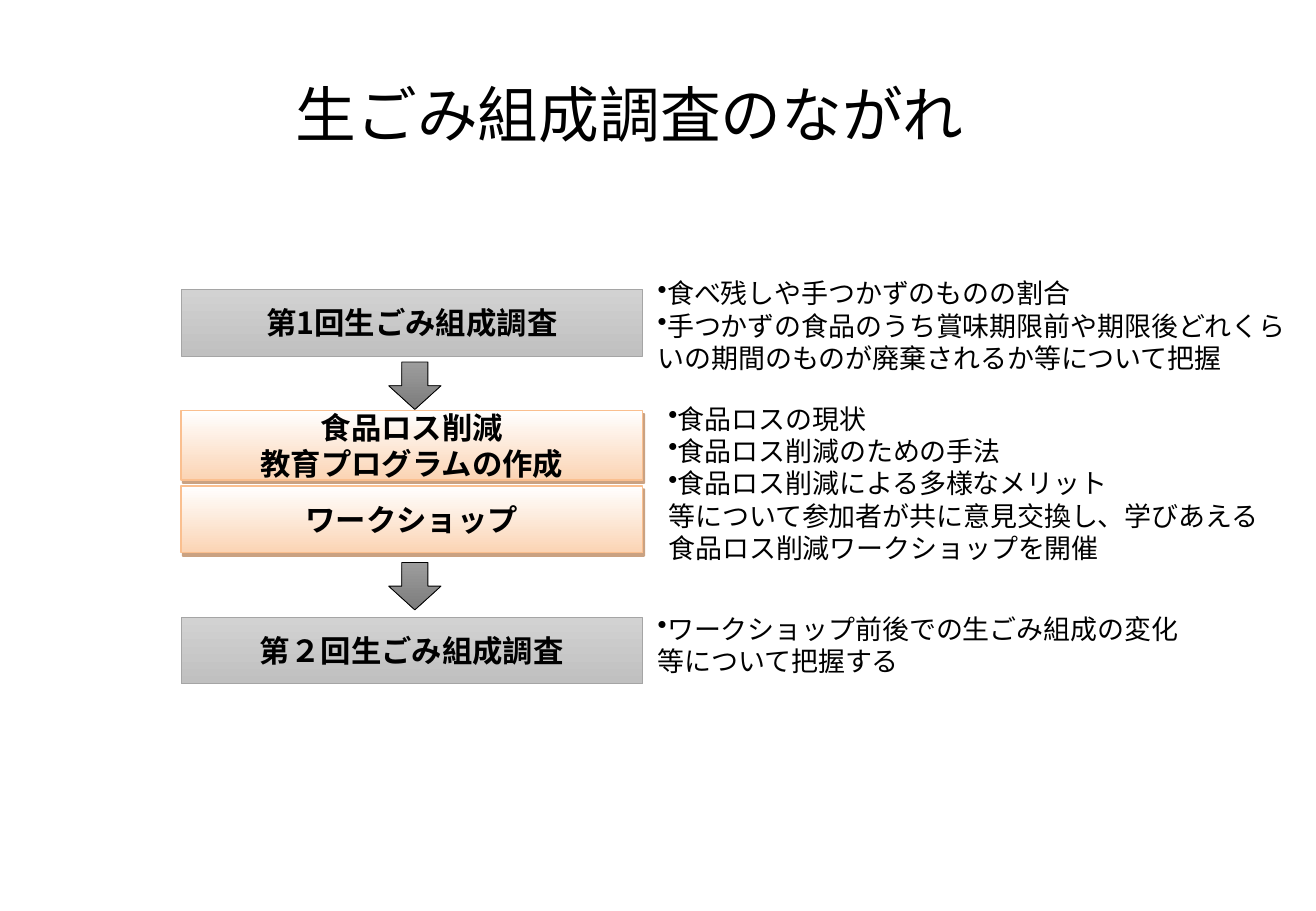
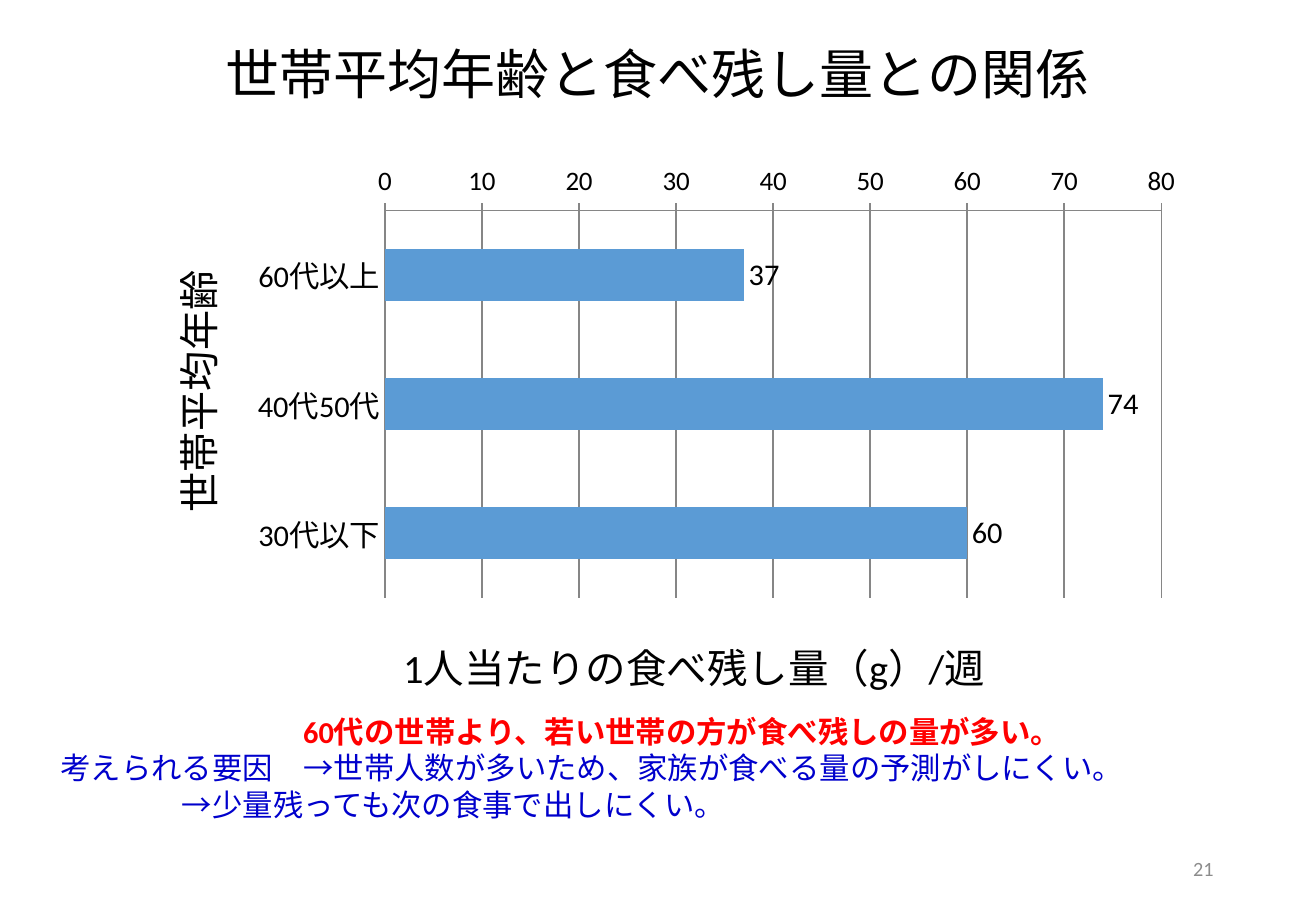
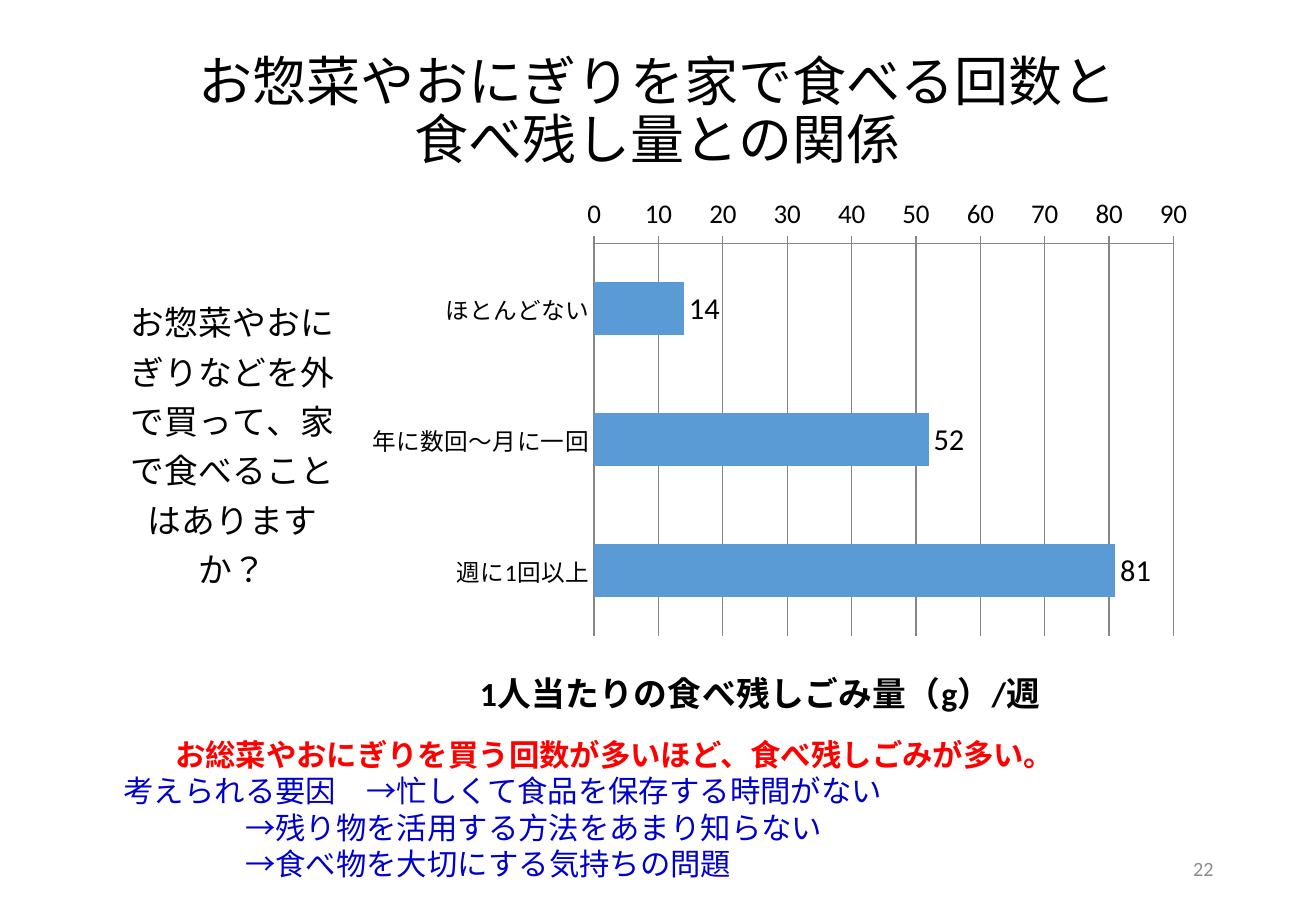
from lxml import etree
from pptx import Presentation
from pptx.chart.data import CategoryChartData
from pptx.dml.color import RGBColor
from pptx.enum import chart as charts, shapes, text
from pptx.oxml.ns import qn
from pptx.util import Pt

# Shared style
BLACK = RGBColor(0x00, 0x00, 0x00)
RED = RGBColor(0xFF, 0x00, 0x00)
BLUE = RGBColor(0x00, 0x00, 0xCC)
BAR_BLUE = RGBColor(0x5B, 0x9B, 0xD5)
AXIS_GRAY = RGBColor(0x86, 0x86, 0x86)
NUMBER_GRAY = RGBColor(0x8C, 0x8C, 0x8C)
GRAY_STYLE = dict(top=RGBColor(0xD2, 0xD2, 0xD2), bottom=RGBColor(0xC0, 0xC0, 0xC0),
                  line=RGBColor(0xA5, 0xA5, 0xA5), weight=0.5)
ORANGE_STYLE = dict(top=RGBColor(0xFF, 0xFF, 0xFF), bottom=RGBColor(0xFB, 0xD4, 0xB4),
                    line=RGBColor(0xFA, 0xBF, 0x8F), weight=1, shadow="974706")
ARROW_STYLE = dict(top=RGBColor(0x9D, 0x9D, 0x9D), bottom=RGBColor(0x7C, 0x7C, 0x7C),
                   line=BLACK, weight=0.5)
LATIN, JAPANESE = "Calibri", "Noto Sans CJK JP"
LINE_HEIGHT = 1.2
NARROW_INSETS = (6, 0.75)
LEFT, CENTER, RIGHT = text.PP_ALIGN.LEFT, text.PP_ALIGN.CENTER, text.PP_ALIGN.RIGHT
TOP, MIDDLE = text.MSO_ANCHOR.TOP, text.MSO_ANCHOR.MIDDLE

# Slide 1: steps as (top, height, style, lines)
FLOW_TITLE = "生ごみ組成調査のながれ"
STEP_LEFT, STEP_WIDTH = 107.3, 273.6
STEPS = [
    (171.4, 39.6, GRAY_STYLE, ["第1回生ごみ組成調査"]),
    (243.4, 41, ORANGE_STYLE, ["食品ロス削減", "教育プログラムの作成"]),
    (288, 39.6, ORANGE_STYLE, ["ワークショップ"]),
    (365.8, 39.6, GRAY_STYLE, ["第２回生ごみ組成調査"]),
]
ARROW_TOPS = [214.6, 333.4]
# Notes as (left, top, width, height, bulleted lines, plain lines)
NOTES = [
    (383.8, 163.4, 396, 72,
     ["食べ残しや手つかずのものの割合",
      "手つかずの食品のうち賞味期限前や期限後どれくらいの期間のものが廃棄されるか等について把握"], []),
    (390.2, 237.6, 389, 100,
     ["食品ロスの現状", "食品ロス削減のための手法", "食品ロス削減による多様なメリット"],
     ["等について参加者が共に意見交換し、学びあえる", "食品ロス削減ワークショップを開催"]),
    (383.8, 362.2, 383.8, 54.7,
     ["ワークショップ前後での生ごみ組成の変化"], ["等について把握する"]),
]

# Slides 2 and 3: layouts are fractions of the chart area
CHART_SLIDES = [
    dict(title=["世帯平均年齢と食べ残し量との関係"], title_top=0, number="21",
         chart_box=(66.2, 92.2, 648, 326.9),
         categories=["60代以上", "40代50代", "30代以下"], values=[37, 74, 60],
         maximum=80, plot=(0.25, 0.1, 0.71, 0.71), category_size=18,
         category_title="世帯平均年齢", category_place=(0.04, 0.2), rotation=-90,
         value_title="1人当たりの食べ残し量（g）/週", value_place=(0.26, 0.86),
         title_size=24, value_bold=False,
         text_box=(28.8, 419, 751, 72.7),
         finding="60代の世帯より、若い世帯の方が食べ残しの量が多い。",
         causes=["世帯人数が多いため、家族が食べる量の予測がしにくい。",
                 "少量残っても次の食事で出しにくい。"]),
    dict(title=["お惣菜やおにぎりを家で食べる回数と", "食べ残し量との関係"],
         title_top=21.6, number="22",
         chart_box=(67, 112.3, 648, 319),
         categories=["ほとんどない", "年に数回～月に一回", "週に1回以上"], values=[14, 52, 81],
         maximum=90, plot=(0.44, 0.1, 0.53, 0.73), category_size=14,
         category_title="お惣菜やおにぎりなどを外で買って、家で食べることはありますか？",
         category_place=(0.01, 0.18), rotation=0,
         value_title="1人当たりの食べ残しごみ量（g）/週", value_place=(0.33, 0.87),
         title_size=20, value_bold=True,
         text_box=(66.2, 432.7, 596.2, 107),
         finding="お総菜やおにぎりを買う回数が多いほど、食べ残しごみが多い。",
         causes=["忙しくて食品を保存する時間がない", "残り物を活用する方法をあまり知らない",
                 "食べ物を大切にする気持ちの問題"]),
]


def style_font(font, size, color=BLACK, bold=False, name=LATIN):
    font.size, font.bold, font.name = Pt(size), bold, name
    font.color.rgb = color


def set_japanese_font(element):
    """Give every run that names a Latin font its East Asian font."""
    for latin in list(element.iter(qn("a:latin"))):
        east_asian = etree.Element(qn("a:ea"), typeface=JAPANESE)
        latin.addnext(east_asian)


def prepare_frame(frame, anchor=TOP, insets=(7.2, 3.6)):
    frame.word_wrap = True
    frame.auto_size = text.MSO_AUTO_SIZE.NONE
    frame.vertical_anchor = anchor
    frame.margin_left = frame.margin_right = Pt(insets[0])
    frame.margin_top = frame.margin_bottom = Pt(insets[1])


def add_line(frame, content, size, align=LEFT, color=BLACK, bold=False,
             name=LATIN, bullet=False, spacing=LINE_HEIGHT):
    paragraph = frame.paragraphs[0]
    if paragraph.runs:
        paragraph = frame.add_paragraph()
    paragraph.alignment = align
    paragraph.line_spacing = Pt(round(size * spacing, 1))
    paragraph.space_before = paragraph.space_after = Pt(0)
    if bullet:
        properties = paragraph._p.get_or_add_pPr()
        properties.set("marL", "0")
        properties.set("indent", "0")
        etree.SubElement(properties, qn("a:buChar"), char="•")
    for index, part in enumerate(content.split("\n")):
        if index:
            paragraph.add_line_break()
        run = paragraph.add_run()
        run.text = part
        style_font(run.font, size, color, bold, name)


def place(shape, box):
    shape.left, shape.top, shape.width, shape.height = map(Pt, box)


def add_text_frame(slide, box, **frame_options):
    frame = slide.shapes.add_textbox(*map(Pt, box)).text_frame
    prepare_frame(frame, **frame_options)
    return frame


def new_slide(presentation, title, box, size, align, anchor=MIDDLE,
              insets=(7.2, 3.6), **line_options):
    slide = presentation.slides.add_slide(presentation.slide_layouts[5])
    placeholder = slide.shapes.title
    place(placeholder, box)
    prepare_frame(placeholder.text_frame, anchor, insets)
    add_line(placeholder.text_frame, title, size, align, **line_options)
    return slide


def add_gradient_shape(slide, kind, box, style):
    shape = slide.shapes.add_shape(kind, *map(Pt, box))
    shape.fill.gradient()
    shape.fill.gradient_angle = 270
    for stop, color in zip(shape.fill.gradient_stops, (style["top"], style["bottom"])):
        stop.color.rgb = color
    shape.line.color.rgb = style["line"]
    shape.line.width = Pt(style["weight"])
    shape.shadow.inherit = False
    if "shadow" in style:
        effects = shape._element.spPr.find(qn("a:effectLst"))
        shadow = etree.SubElement(effects, qn("a:outerShdw"), blurRad="0", dist=str(Pt(2.2)),
                                  dir=str(63 * 60000), algn="ctr", rotWithShape="0")
        color = etree.SubElement(shadow, qn("a:srgbClr"), val=style["shadow"])
        etree.SubElement(color, qn("a:alpha"), val="50000")
    return shape


def manual_layout(position, inner=False):
    layout = etree.Element(qn("c:layout"))
    manual = etree.SubElement(layout, qn("c:manualLayout"))
    settings = [("layoutTarget", "inner")] if inner else []
    settings += [("xMode", "edge"), ("yMode", "edge")]
    settings += zip("xywh", map(str, position))
    for tag, value in settings:
        etree.SubElement(manual, qn("c:" + tag), val=value)
    return layout


def remove_layout(element):
    for layout in element.findall(qn("c:layout")):
        element.remove(layout)


def add_axis_title(axis, content, size, position, bold=False, rotation=0):
    frame = axis.axis_title.text_frame
    run = frame.paragraphs[0].add_run()
    run.text = content
    style_font(run.font, size, bold=bold)
    title = axis.axis_title._element
    body = title.find(".//" + qn("a:bodyPr"))
    body.set("rot", str(rotation * 60000))
    body.set("vert", "horz")
    remove_layout(title)
    title.find(qn("c:tx")).addnext(manual_layout(position))


def add_bar_chart(slide, data):
    chart_data = CategoryChartData()
    chart_data.categories = data["categories"]
    chart_data.add_series("Series 1", data["values"])
    chart = slide.shapes.add_chart(charts.XL_CHART_TYPE.BAR_CLUSTERED,
                                   *map(Pt, data["chart_box"]), chart_data).chart
    chart.has_legend = chart.has_title = False
    style_font(chart.font, 10)

    # Bars and their labels
    plot = chart.plots[0]
    plot.gap_width = 150
    plot.vary_by_categories = False
    fill = plot.series[0].format.fill
    fill.solid()
    fill.fore_color.rgb = BAR_BLUE
    plot.has_data_labels = True
    labels = plot.data_labels
    labels.show_value = True
    labels.number_format, labels.number_format_is_linked = r"#,##0_);\(#,##0\)", False
    labels.position = charts.XL_LABEL_POSITION.OUTSIDE_END
    style_font(labels.font, 18)

    # Axes
    category_axis, value_axis = chart.category_axis, chart.value_axis
    category_axis.reverse_order = True
    category_axis.major_tick_mark = charts.XL_TICK_MARK.NONE
    category_axis.has_major_gridlines = False
    value_axis.major_tick_mark = charts.XL_TICK_MARK.CROSS
    value_axis.minimum_scale, value_axis.maximum_scale = 0, data["maximum"]
    value_axis.major_unit = 10
    value_axis.has_major_gridlines = True
    for item in (category_axis, value_axis, value_axis.major_gridlines):
        item.format.line.color.rgb = AXIS_GRAY
        item.format.line.width = Pt(0.75)
    style_font(category_axis.tick_labels.font, data["category_size"])
    style_font(value_axis.tick_labels.font, 16)
    add_axis_title(category_axis, data["category_title"], data["title_size"],
                   data["category_place"], rotation=data["rotation"])
    add_axis_title(value_axis, data["value_title"], data["title_size"],
                   data["value_place"], bold=data["value_bold"])

    plot_area = chart._chartSpace.find(".//" + qn("c:plotArea"))
    remove_layout(plot_area)
    plot_area.insert(0, manual_layout(data["plot"], inner=True))
    set_japanese_font(chart._chartSpace)


def build_flow_slide(presentation):
    slide = new_slide(presentation, FLOW_TITLE, (169.2, 45, 485.3, 44), 36, LEFT,
                      anchor=TOP, insets=NARROW_INSETS, name=JAPANESE)
    for top, height, style, lines in STEPS:
        step = add_gradient_shape(slide, shapes.MSO_SHAPE.RECTANGLE,
                                  (STEP_LEFT, top, STEP_WIDTH, height), style)
        prepare_frame(step.text_frame, MIDDLE, NARROW_INSETS)
        for line in lines:
            add_line(step.text_frame, line, 18, CENTER, bold=True, name=JAPANESE)
    for top in ARROW_TOPS:
        add_gradient_shape(slide, shapes.MSO_SHAPE.DOWN_ARROW,
                           (230.4, top, 31, 28.1), ARROW_STYLE)
    for *box, bulleted, plain in NOTES:
        frame = add_text_frame(slide, box, insets=NARROW_INSETS)
        for line in bulleted + plain:
            add_line(frame, line, 16, name=JAPANESE, bullet=line in bulleted)


def build_chart_slide(presentation, data):
    slide = new_slide(presentation, "\n".join(data["title"]),
                      (49.7, data["title_top"], 680.4, 90), 32, CENTER,
                      spacing=0.9 * LINE_HEIGHT)
    add_bar_chart(slide, data)

    # Finding and its likely causes
    frame = add_text_frame(slide, data["text_box"])
    add_line(frame, data["finding"], 18, CENTER, RED, bold=True)
    for index, cause in enumerate(data["causes"]):
        lead = "\t" if index else "考えられる要因"
        add_line(frame, f"{lead}\t→{cause}", 18, color=BLUE)

    # Page number
    frame = add_text_frame(slide, (550.8, 500.4, 175.7, 28.8), anchor=MIDDLE)
    add_line(frame, data["number"], 12, RIGHT, NUMBER_GRAY)


def main():
    presentation = Presentation()
    presentation.slide_width, presentation.slide_height = Pt(780), Pt(540)
    build_flow_slide(presentation)
    for data in CHART_SLIDES:
        build_chart_slide(presentation, data)
    for slide in presentation.slides:
        set_japanese_font(slide._element)
    presentation.save("out.pptx")


if __name__ == "__main__":
    main()
